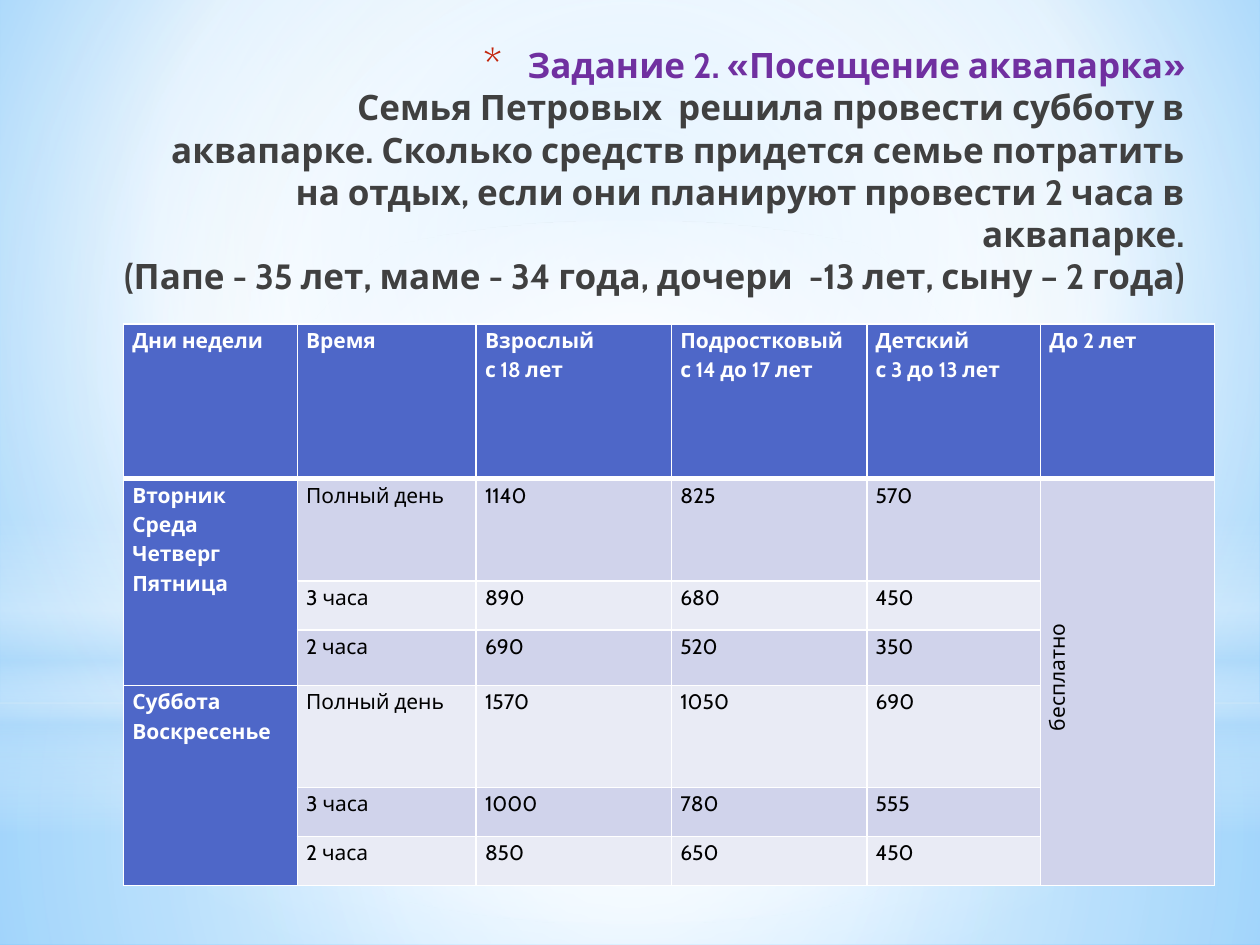
from dataclasses import dataclass

from lxml.etree import SubElement
from pptx import Presentation
from pptx.dml.color import RGBColor
from pptx.enum.shapes import MSO_SHAPE
from pptx.enum.text import MSO_ANCHOR, PP_ALIGN
from pptx.oxml.ns import qn
from pptx.util import Inches, Pt


@dataclass(frozen=True)
class Theme:
    font: str = "Cabin"
    title_size: int = 20
    cell_size: int = 12
    accent: str = "7030A0"
    body: str = "404040"
    bullet: str = "C3260C"
    head: str = "4E67C8"
    bands: tuple = ("D0D3EB", "E9EBF5")
    white: str = "FFFFFF"
    black: str = "000000"
    sky: str = "B4DCFA"


class Deck:
    def __init__(self, theme):
        self.theme = theme
        self.prs = Presentation()
        self.prs.slide_width, self.prs.slide_height = Inches(10), Inches(7.5)
        self.s = self.prs.slides.add_slide(self.prs.slide_layouts[6])

    def gradient(self, parent, stops, focus=None):
        """Swap the solid fill in parent for a gradient: radial with a focus, else vertical."""
        old = parent.find(qn("a:solidFill"))
        grad = old.makeelement(qn("a:gradFill"), {"rotWithShape": "1"})
        gs_list = SubElement(grad, qn("a:gsLst"))
        for pos, color, alpha in stops:
            gs = SubElement(gs_list, qn("a:gs"), pos=str(pos * 1000))
            clr = SubElement(gs, qn("a:srgbClr"), val=color)
            if alpha < 100:
                SubElement(clr, qn("a:alpha"), val=str(alpha * 1000))
        if focus:
            path = SubElement(grad, qn("a:path"))
            path.set("path", "circle")
            rect = SubElement(path, qn("a:fillToRect"))
            for side, value in zip("ltrb", focus):
                rect.set(side, str(value * 1000))
        else:
            SubElement(grad, qn("a:lin"), ang="5400000", scaled="0")
        parent.replace(old, grad)

    def background(self, stops, focus):
        self.s.background.fill.solid()
        self.gradient(self.s.element.find(".//" + qn("p:bgPr")), stops, focus)

    def glow(self, kind, top, height, stops, focus=(50, 50, 50, 50)):
        sp = self.s.shapes.add_shape(kind, 0, Inches(top), Inches(10), Inches(height))
        sp.shadow.inherit = False
        sp.line.fill.background()
        sp.fill.solid()
        self.gradient(sp.element.spPr, stops, focus)

    def run(self, p, text, size, color, bold):
        r = p.add_run()
        r.text = text
        r.font.name, r.font.size, r.font.bold = self.theme.font, Pt(size), bold
        r.font.color.rgb = RGBColor.from_string(color)

    def indent(self, p, margin, first):
        pPr = p._p.get_or_add_pPr()
        pPr.set("marL", str(Inches(margin)))
        pPr.set("indent", str(Inches(first)))
        return pPr

    def title(self, box, paragraphs):
        t = self.theme
        tf = self.s.shapes.add_textbox(*map(Inches, box)).text_frame
        tf.word_wrap = True
        for i, (text, color, first, bullet) in enumerate(paragraphs):
            p = tf.add_paragraph() if i else tf.paragraphs[0]
            p.alignment = PP_ALIGN.RIGHT
            pPr = self.indent(p, 0.35, first)
            if bullet:
                SubElement(SubElement(pPr, qn("a:buClr")), qn("a:srgbClr"), val=t.bullet)
                SubElement(pPr, qn("a:buSzPct"), val="128000")
                SubElement(pPr, qn("a:buFont"), typeface=t.font)
                SubElement(pPr, qn("a:buChar"), char=bullet)
            self.run(p, text, t.title_size, color, True)

    def borders(self, cell, top, bottom):
        tcPr = cell._tc.get_or_add_tcPr()
        for i, (side, width) in enumerate(zip("LRTB", (1, 1, top, bottom))):
            ln = tcPr.makeelement(qn("a:ln" + side), {"w": str(Pt(width))})
            SubElement(SubElement(ln, qn("a:solidFill")), qn("a:srgbClr"), val=self.theme.white)
            tcPr.insert(i, ln)

    def cell(self, cell, text, fill, color, bold):
        cell.margin_left = cell.margin_right = Inches(0.07)
        cell.margin_top = cell.margin_bottom = 0
        cell.fill.solid()
        cell.fill.fore_color.rgb = RGBColor.from_string(fill)
        tf = cell.text_frame
        for i, line in enumerate(text.split("\n") if text else []):
            p = tf.add_paragraph() if i else tf.paragraphs[0]
            p.line_spacing = 1.15
            self.run(p, line, self.theme.cell_size, color, bold)

    def table(self, left, top, cols, heights, rows, merges):
        t = self.theme
        tbl = self.s.shapes.add_table(
            len(rows), len(cols), Inches(left), Inches(top),
            Inches(sum(cols)), Inches(sum(heights))).table
        for col, width in zip(tbl.columns, cols):
            col.width = Inches(width)
        for row, height in zip(tbl.rows, heights):
            row.height = Inches(height)
        for i, row in enumerate(rows):
            for j, text in enumerate(row):
                c = tbl.cell(i, j)
                if i == 0 or j == 0:
                    self.cell(c, text, t.head, t.white, True)
                else:
                    self.cell(c, text, t.bands[(i - 1) % 2], t.black, False)
                self.borders(c, 3 if i == 1 else 1, 3 if i == 0 else 1)
        for first, last, col in merges:
            tbl.cell(first, col).merge(tbl.cell(last, col))
        return tbl

    def turn(self, cell):
        cell.vertical_anchor = MSO_ANCHOR.MIDDLE
        cell._tc.get_or_add_tcPr().set("vert", "vert270")
        p = cell.text_frame.paragraphs[0]
        p.alignment = PP_ALIGN.CENTER
        self.indent(p, 0.08, 0)


def main():
    t = Theme()
    d = Deck(t)
    w, sky = t.white, t.sky

    # Sky background and soft light layers
    d.background([(0, "9ED5FF", 100), (60, w, 100), (100, "5BB9FF", 100)], (20, 10, 20, 60))
    rect = MSO_SHAPE.RECTANGLE
    d.glow(rect, 5.58, 1.92, [(0, w, 91), (37, w, 76), (100, sky, 79)])
    d.glow(rect, 0, 5.58, [(0, w, 89), (48, w, 62), (100, sky, 79)])
    d.glow(rect, 4.12, 2.5, [(0, w, 0), (29, w, 30), (45, sky, 40), (55, w, 26),
                             (65, sky, 60), (100, w, 0)], None)
    d.glow(MSO_SHAPE.OVAL, 1.75, 5.58, [(0, w, 100), (56, w, 0)])

    # Task text
    d.title((0.5, 0.3, 9, 1.87), [
        ("Задание 2. «Посещение аквапарка»", t.accent, -0.35, "*"),
        ("Семья Петровых  решила провести субботу в аквапарке. Сколько средств "
         "придется семье потратить на отдых, если они планируют провести 2 часа "
         "в аквапарке.", t.body, 0.4, None),
        ("(Папе - 35 лет, маме - 34 года, дочери  -13 лет, сыну – 2 года)",
         t.body, 0, None),
    ])

    # Price table
    rows = [
        ("Дни недели", "Время", "Взрослый\nс 18 лет", "Подростковый\nс 14 до 17 лет",
         "Детский\nс 3 до 13 лет", "До 2 лет"),
        ("Вторник\nСреда\nЧетверг\nПятница", "Полный день", "1140", "825", "570", "бесплатно"),
        ("", "3 часа", "890", "680", "450", ""),
        ("", "2 часа", "690", "520", "350", ""),
        ("Суббота\nВоскресенье", "Полный день", "1570", "1050", "690", ""),
        ("", "3 часа", "1000", "780", "555", ""),
        ("", "2 часа", "850", "650", "450", ""),
    ]
    tbl = d.table(0.98, 2.57, (1.38, 1.42, 1.55, 1.55, 1.38, 1.38),
                  (1.23, 0.81, 0.39, 0.44, 0.81, 0.39, 0.39), rows,
                  [(1, 3, 0), (4, 6, 0), (1, 6, 5)])
    d.turn(tbl.cell(1, 5))

    d.prs.save("out.pptx")


if __name__ == "__main__":
    main()
